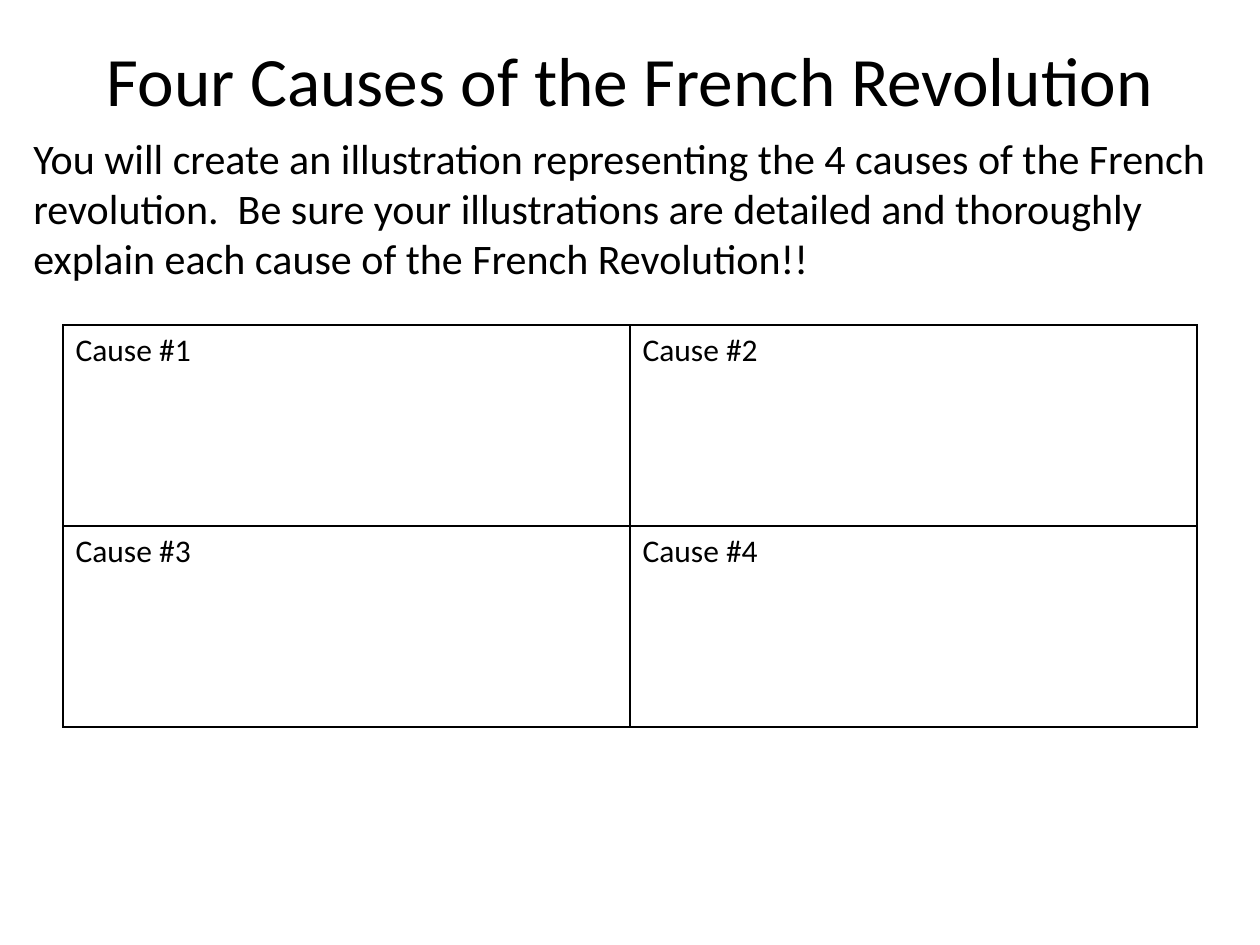
from lxml.etree import SubElement as Sub
from pptx import Presentation
from pptx.dml.color import RGBColor as RGB
from pptx.enum.text import MSO_ANCHOR as Anchor, MSO_AUTO_SIZE as Fit, PP_ALIGN as Align
from pptx.oxml.ns import qn
from pptx.util import Pt

# Content
TITLE = "Four Causes of the French Revolution"
TASK = ("You will create an illustration representing the 4 causes of the French "
        "revolution.  Be sure your illustrations are detailed and thoroughly "
        "explain each cause of the French Revolution!!")
CAUSES = [["Cause #1", "Cause #2"],
          ["Cause #3", "Cause #4"]]

# Format: lengths in px, 126 to the inch
PX = 914400 // 126
HUES = {"ink": "000000", "page": "FFFFFF"}
COL, ROW = 567, 201
BOXES = {"title": (63, 0, 1134, 158),
         "task": (21, 126, 1207, 165),
         "table": (63, 325, 2 * COL, 2 * ROW)}


def hue(name):
    return RGB.from_string(HUES[name])


def emu(box):
    return [n * PX for n in box]


def write(frame, text, size, align=Align.LEFT):
    frame.text = text
    para = frame.paragraphs[0]
    para.alignment = align
    font = para.runs[0].font
    look = {"name": "Calibri", "size": Pt(size), "bold": False}
    for key, val in look.items():
        setattr(font, key, val)
    font.color.rgb = hue("ink")


def rule(cell):
    props = cell._tc.get_or_add_tcPr()
    for at, side in enumerate(("lnL", "lnR", "lnT", "lnB")):
        line = Sub(props, qn("a:" + side), w=str(Pt(1)))
        fill = Sub(line, qn("a:solidFill"))
        Sub(fill, qn("a:srgbClr"), val=HUES["ink"])
        props.insert(at, line)


deck = Presentation()
deck.slide_width, deck.slide_height = emu((1260, 945))
slide = deck.slides.add_slide(deck.slide_layouts[5])
slide.background.fill.solid()
slide.background.fill.fore_color.rgb = hue("page")

# Title
title = slide.shapes.title
for key, val in zip(("left", "top", "width", "height"), emu(BOXES["title"])):
    setattr(title, key, val)
write(title.text_frame, TITLE, 39.6, Align.CENTER)
for key, val in {"vertical_anchor": Anchor.MIDDLE, "auto_size": Fit.NONE,
                 "word_wrap": True}.items():
    setattr(title.text_frame, key, val)

# Task
task = slide.shapes.add_textbox(*emu(BOXES["task"])).text_frame
task.word_wrap = True
task.auto_size = Fit.SHAPE_TO_FIT_TEXT
write(task, TASK, 24)

# Table of causes
grid = slide.shapes.add_table(2, 2, *emu(BOXES["table"])).table
for flag in ("first_row", "horz_banding"):
    setattr(grid, flag, False)
for r, row in enumerate(CAUSES):
    for c, text in enumerate(row):
        cell = grid.cell(r, c)
        write(cell.text_frame, text, 18)
        cell.fill.solid()
        cell.fill.fore_color.rgb = hue("page")
        rule(cell)

deck.save("out.pptx")
